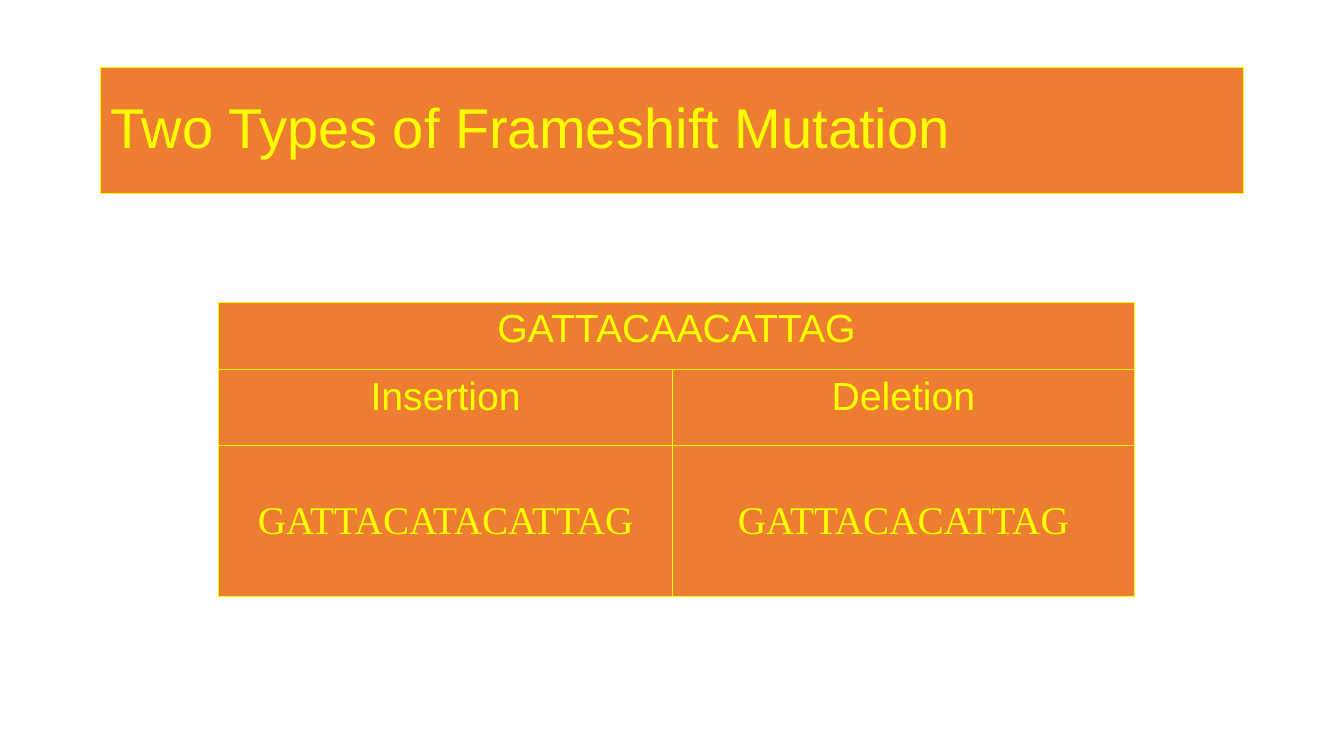
from lxml.etree import SubElement
from pptx import Presentation
from pptx.dml.color import RGBColor
from pptx.enum.text import MSO_ANCHOR as Anchor, MSO_AUTO_SIZE as AutoSize, PP_ALIGN as Align
from pptx.oxml.ns import qn
from pptx.util import Inches, Pt

ORANGE = RGBColor(0xED, 0x7D, 0x31)
YELLOW = RGBColor(0xFF, 0xFF, 0x00)

TITLE_BOX = (1, 0.67, 11.33, 1.25)
TABLE_BOX = (2.17, 3, 9.08, 2.92)
COLUMN_WIDTHS = (4.5, 4.58)
ROW_HEIGHTS = (0.67, 0.75, 1.5)
ROWS = (
    ("GATTACAACATTAG", ""),
    ("Insertion", "Deletion"),
    ("GATTACATACATTAG", "GATTACACATTAG"),
)
ROW_FORMATS = (
    ("Arial", Anchor.TOP),
    ("Arial", Anchor.TOP),
    ("Times New Roman", Anchor.MIDDLE),
)


def set_all(target, formats):
    for name, value in formats.items():
        setattr(target, name, value)


def write(tf, text, font, size, align):
    p = tf.paragraphs[0]
    p.alignment = align
    r = p.add_run()
    r.text = text
    set_all(r.font, {"name": font, "size": Pt(size), "bold": False})
    r.font.color.rgb = YELLOW
    return p


def add_borders(cell):
    tcPr = cell._tc.get_or_add_tcPr()
    for side in ("a:lnL", "a:lnR", "a:lnT", "a:lnB"):
        ln = SubElement(tcPr, qn(side), w=str(Pt(1)))
        fill = SubElement(ln, qn("a:solidFill"))
        SubElement(fill, qn("a:srgbClr"), val=str(YELLOW))


def add_title(s, box):
    title = s.shapes.title
    set_all(title, dict(zip(("left", "top", "width", "height"), map(Inches, box))))
    title.fill.solid()
    title.fill.fore_color.rgb = ORANGE
    title.line.color.rgb = YELLOW
    title.line.width = Pt(0.75)
    tf = title.text_frame
    set_all(tf, {"word_wrap": True, "auto_size": AutoSize.NONE,
                 "vertical_anchor": Anchor.MIDDLE})
    p = write(tf, "Two Types of Frameshift Mutation", "Arial", 40, Align.LEFT)
    p.line_spacing = 0.9


def add_mutation_table(s, box):
    table = s.shapes.add_table(len(ROWS), len(COLUMN_WIDTHS), *map(Inches, box)).table
    set_all(table, {"first_row": False, "horz_banding": False})
    for column, width in zip(table.columns, COLUMN_WIDTHS):
        column.width = Inches(width)
    for row, height, texts, (font, anchor) in zip(table.rows, ROW_HEIGHTS, ROWS, ROW_FORMATS):
        row.height = Inches(height)
        for cell, text in zip(row.cells, texts):
            add_borders(cell)
            cell.fill.solid()
            cell.fill.fore_color.rgb = ORANGE
            cell.vertical_anchor = anchor
            if text:
                write(cell.text_frame, text, font, 28, Align.CENTER)
    table.cell(0, 0).merge(table.cell(0, 1))


def main():
    prs = Presentation()
    set_all(prs, {"slide_width": Inches(13.33), "slide_height": Inches(7.5)})
    s = prs.slides.add_slide(prs.slide_layouts[5])
    add_title(s, TITLE_BOX)
    add_mutation_table(s, TABLE_BOX)
    prs.save("out.pptx")


if __name__ == "__main__":
    main()
